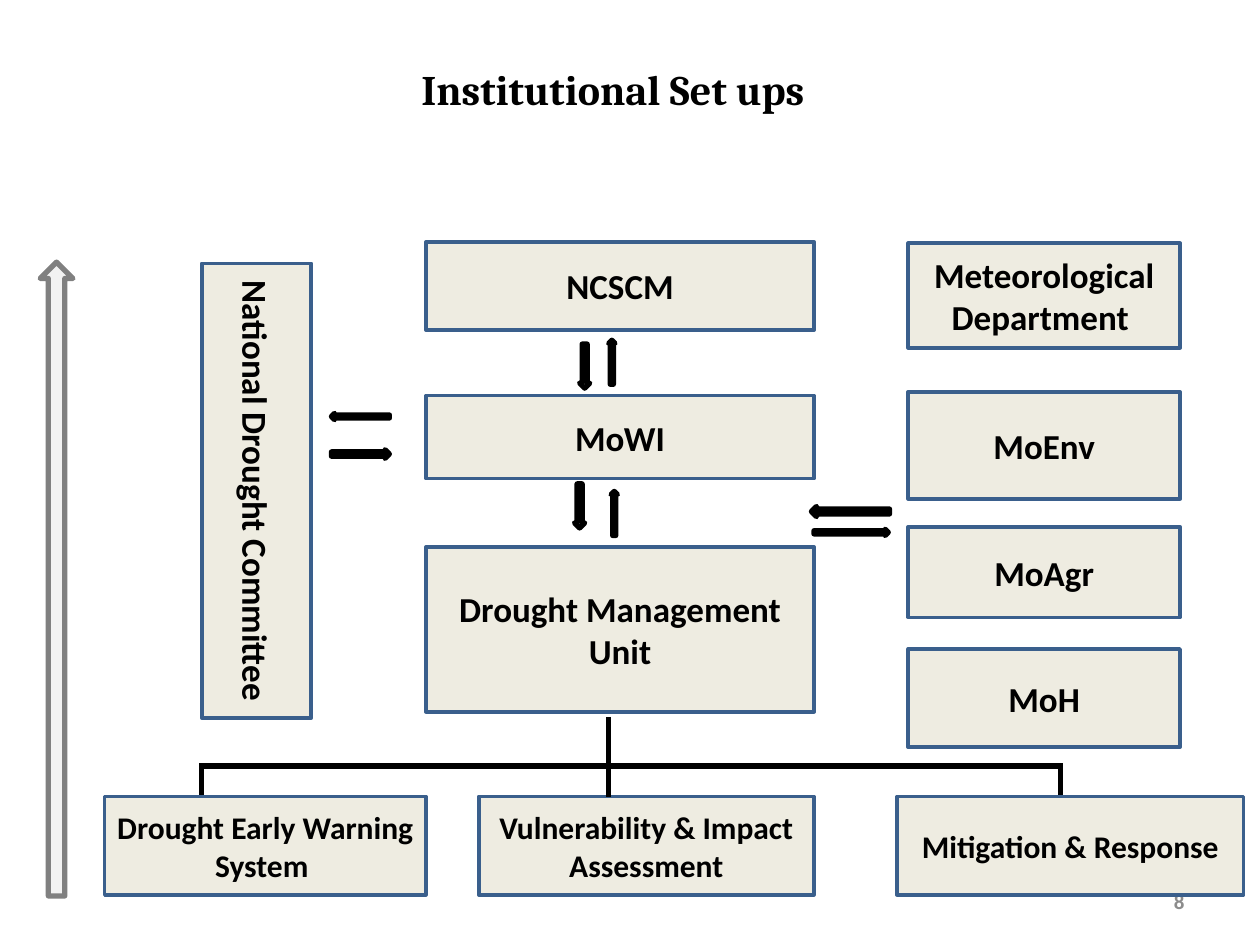
from lxml import etree
from pptx import Presentation
from pptx.dml.color import RGBColor
from pptx.enum.shapes import MSO_CONNECTOR, MSO_SHAPE
from pptx.enum.text import MSO_ANCHOR, MSO_AUTO_SIZE, PP_ALIGN
from pptx.oxml.ns import qn
from pptx.util import Pt

RECT = MSO_SHAPE.RECTANGLE
UP, DOWN = MSO_SHAPE.UP_ARROW, MSO_SHAPE.DOWN_ARROW
LEFT, RIGHT = MSO_SHAPE.LEFT_ARROW, MSO_SHAPE.RIGHT_ARROW

BLACK = RGBColor(0x00, 0x00, 0x00)
CREAM = RGBColor(0xEE, 0xEC, 0xE1)
BLUE = RGBColor(0x3A, 0x5F, 0x8C)
GREY = RGBColor(0x80, 0x80, 0x80)
PALE_GREY = RGBColor(0xF2, 0xF2, 0xF2)
NUMBER_GREY = RGBColor(0x8C, 0x8C, 0x8C)

# Each column: left, width, then (text, top, height)
CENTRE_X, CENTRE_W = 243.4, 221.8
CENTRE = [("NCSCM", 138.2, 50.4), ("MoWI", 226.1, 47.5),
          ("Drought Management Unit", 312.5, 94.3)]
PARTNER_X, PARTNER_W = 519, 155.4
PARTNERS = [("Meteorological Department ", 139, 59.8), ("MoEnv", 223.9, 61.2),
            ("MoAgr", 301, 51.8), ("MoH", 370.8, 56.2)]
# Bottom row: text, left, width
UNIT_Y, UNIT_H = 455.2, 56.2
UNITS = [("Drought Early Warning System ", 59.8, 183.6),
         ("Vulnerability & Impact Assessment", 273.6, 191.5),
         ("Mitigation & Response", 512.6, 198)]
# Small arrows: kind, left, top, width, height
ARROWS = [
    (DOWN, 331.2, 196.6, 5.8, 25.2), (UP, 347.8, 194.4, 3.6, 25.2),
    (DOWN, 328.3, 276.5, 5.8, 25.2), (UP, 349.2, 280.8, 3.6, 25.2),
    (RIGHT, 189.4, 257, 33.1, 5), (LEFT, 189.4, 236.2, 33.1, 3.6),
    (RIGHT, 465.1, 302.4, 42.5, 3.6), (LEFT, 463.7, 289.4, 44.6, 5.8),
]
TRUNK_X, BAR_Y = 347.8, 437.8
BRANCHES_X = (115.2, 606.2)


def set_text(tf, text, size, color=BLACK, font="Calibri", align=PP_ALIGN.CENTER,
             anchor=MSO_ANCHOR.MIDDLE):
    tf.word_wrap = True
    tf.vertical_anchor = anchor
    p = tf.paragraphs[0]
    p.text = text
    p.alignment = align
    p.font.size = Pt(size)
    p.font.name = font
    p.font.bold = True
    p.font.color.rgb = color
    return p


def add_title(slide, text):
    title = slide.shapes.title
    title.left, title.top, title.width, title.height = Pt(-5), Pt(18), Pt(715.6), Pt(46)
    title.text_frame.auto_size = MSO_AUTO_SIZE.NONE
    p = set_text(title.text_frame, text, 24, font="Cambria", anchor=MSO_ANCHOR.TOP)
    p.line_spacing = 1.5


def add_page_number(slide, text):
    box = slide.shapes.add_textbox(Pt(516.2), Pt(500.4), Pt(167.8), Pt(28.8))
    set_text(box.text_frame, text, 12, NUMBER_GREY, align=PP_ALIGN.RIGHT)


def add_outlined(slide, kind, x, y, w, h, line, width, fill=None):
    s = slide.shapes.add_shape(kind, Pt(x), Pt(y), Pt(w), Pt(h))
    s.shadow.inherit = False
    if fill is None:
        s.fill.background()
    else:
        s.fill.solid()
        s.fill.fore_color.rgb = fill
    s.line.color.rgb = line
    s.line.width = Pt(width)
    return s


def add_box(slide, text, x, y, w, h, size=20):
    s = add_outlined(slide, RECT, x, y, w, h, BLUE, 2, CREAM)
    set_text(s.text_frame, text, size)
    return s


def add_line(slide, x1, y1, x2, y2):
    c = slide.shapes.add_connector(MSO_CONNECTOR.STRAIGHT, Pt(x1), Pt(y1), Pt(x2), Pt(y2))
    c.line.color.rgb = BLACK
    c.line.width = Pt(3)
    etree.SubElement(c._element.spPr, qn("a:effectLst"))


def add_tree(slide):
    """Draw the lines from the management unit down to its three sections."""
    add_line(slide, TRUNK_X, 409.7, TRUNK_X, BAR_Y)
    add_line(slide, BRANCHES_X[0], BAR_Y, BRANCHES_X[1], BAR_Y)
    add_line(slide, TRUNK_X, BAR_Y, TRUNK_X, UNIT_Y)
    for x in BRANCHES_X:
        add_line(slide, x, BAR_Y - 1.5, x, UNIT_Y - 1)


def main():
    prs = Presentation()
    prs.slide_width, prs.slide_height = Pt(720), Pt(540)
    slide = prs.slides.add_slide(prs.slide_layouts[5])

    add_title(slide, "Institutional Set ups ")
    add_page_number(slide, "8")
    for text, y, h in CENTRE:
        add_box(slide, text, CENTRE_X, y, CENTRE_W, h)
    for text, y, h in PARTNERS:
        add_box(slide, text, PARTNER_X, y, PARTNER_W, h)
    for text, x, w in UNITS:
        add_box(slide, text, x, UNIT_Y, w, UNIT_H, size=18)
    committee = add_box(slide, "National Drought Committee", 16.6, 249.1, 259.9, 62.6)
    committee.rotation = 90

    for kind, x, y, w, h in ARROWS:
        add_outlined(slide, kind, x, y, w, h, BLACK, 3)
    add_tree(slide)
    add_outlined(slide, UP, 23, 149.8, 18.7, 362.2, GREY, 3, PALE_GREY)

    prs.save("out.pptx")


if __name__ == "__main__":
    main()
